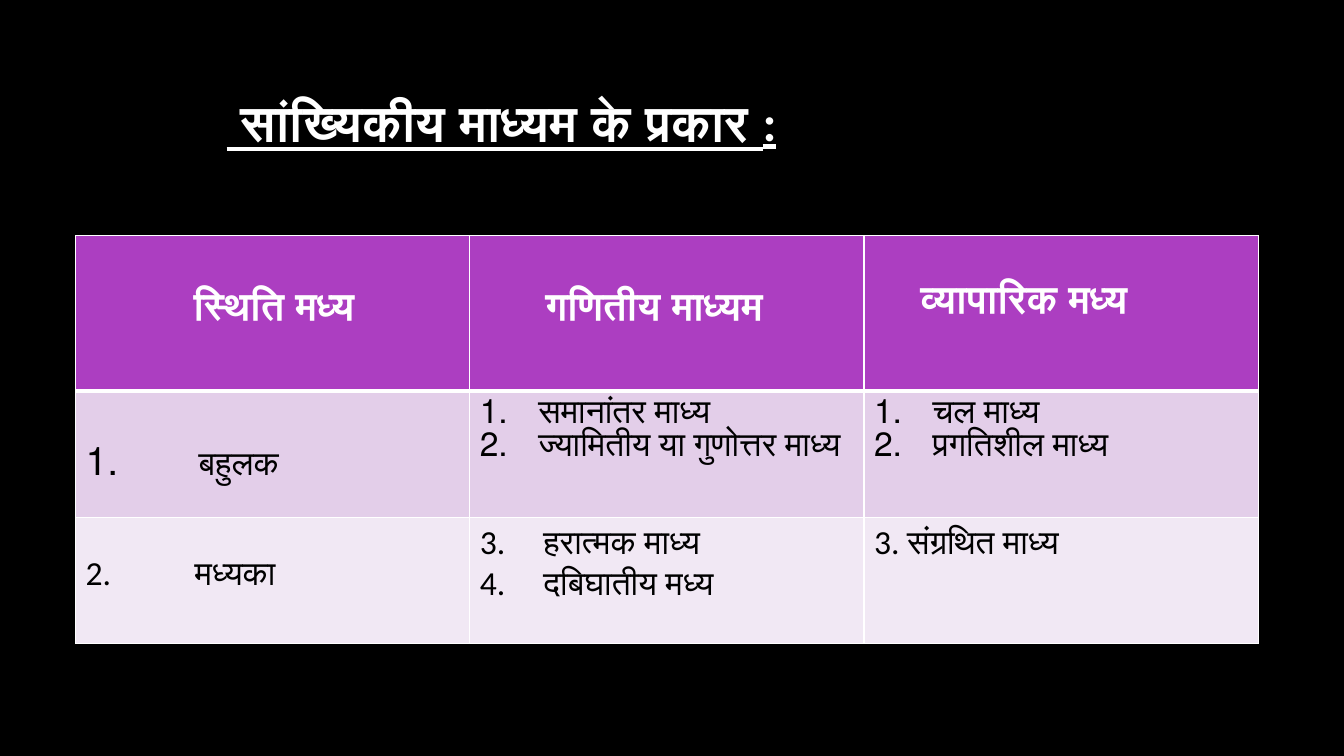
from lxml.etree import SubElement
from pptx import Presentation
from pptx.dml.color import RGBColor as RGB
from pptx.enum.text import MSO_ANCHOR as Anchor, PP_ALIGN as Align
from pptx.oxml import parse_xml
from pptx.oxml.ns import nsdecls, qn
from pptx.util import Inches, Pt

WIDE, HIGH = 13.33, 7.5
BLACK = RGB(0, 0, 0)
WHITE = RGB(255, 255, 255)
PURPLE = RGB(0xAC, 0x3E, 0xC1)
LILAC = RGB(0xE3, 0xCE, 0xE9)
PALE = RGB(0xF1, 0xE8, 0xF4)

TITLE = dict(name="Calibri", size=Pt(36), bold=True, underline=True)
HEAD = dict(name="Calibri", size=Pt(28), bold=True)
BODY = dict(name="Calibri", size=Pt(24), bold=False)

ROWS = [1.54, 1.25, 1.25]
FILLS = [PURPLE, LILAC, PALE]
PAD = 0.1

# Each cell: lines, top margin, left margin, hanging indent, number size in percent
CELLS = [
    [(["स्थिति मध्य"], 0.53, 1.17, 0, 0),
     (["गणितीय माध्यम"], 0.53, 0.75, 0, 0),
     (["व्यापारिक मध्य"], 0.46, 0.56, 0, 0)],
    [(["बहुलक"], 0.57, PAD, 1.12, 117),
     (["समानांतर माध्य", "ज्यामितीय या गुणोत्तर माध्य"], 0.05, PAD, 0.58, 100),
     (["चल माध्य", "प्रगतिशील माध्य"], 0.05, PAD, 0.58, 100)],
    [(["2.\tमध्यका"], 0.36, PAD, 1.08, 0),
     (["3.\tहरात्मक माध्य", "4.\tदबिघातीय मध्य"], 0.05, PAD, 0.63, 0),
     (["3. संग्रथित माध्य"], 0.05, PAD, 0, 0)],
]


def style(font, look, color):
    for key, value in look.items():
        setattr(font, key, value)
    font.color.rgb = color


def hang(para, indent, percent):
    """Set a hanging indent, with automatic numbers if percent is given."""
    props = para._p.get_or_add_pPr()
    props.set("marL", str(Inches(indent)))
    props.set("indent", str(-Inches(indent)))
    if percent:
        SubElement(props, qn("a:buSzPct"), val=str(percent * 1000))
        SubElement(props, qn("a:buFont"), typeface="Arial")
        SubElement(props, qn("a:buAutoNum"), type="arabicPeriod")


def edge(cell, widths):
    """Draw white borders; widths run left, right, top, bottom in points."""
    props = cell._tc.get_or_add_tcPr()
    for spot, (side, width) in enumerate(zip("LRTB", widths)):
        props.insert(spot, parse_xml(
            f'<a:ln{side} {nsdecls("a")} w="{Pt(width)}"><a:solidFill>'
            f'<a:srgbClr val="{WHITE}"/></a:solidFill></a:ln{side}>'))


def fill_cell(cell, row, data):
    lines, top, left, indent, percent = data
    cell.fill.solid()
    cell.fill.fore_color.rgb = FILLS[row]
    edge(cell, (1, 1, 3 if row == 1 else 1, 3 if row == 0 else 1))
    cell.margin_top, cell.margin_left = Inches(top), Inches(left)
    cell.vertical_anchor = Anchor.TOP
    frame = cell.text_frame
    for index, line in enumerate(lines):
        para = frame.add_paragraph() if index else frame.paragraphs[0]
        para.alignment = Align.LEFT
        if indent:
            hang(para, indent, percent)
        run = para.add_run()
        run.text = line
        style(run.font, BODY if row else HEAD, BLACK if row else WHITE)


def add_title(slide, box):
    frame = slide.shapes.add_textbox(*map(Inches, box)).text_frame
    frame.word_wrap = True
    frame.vertical_anchor = Anchor.MIDDLE
    para = frame.paragraphs[0]
    para.line_spacing = 0.9
    run = para.add_run()
    run.text = " सांख्यिकीय माध्यम के प्रकार :"
    style(run.font, TITLE, WHITE)


def add_grid(slide, box):
    table = slide.shapes.add_table(
        len(CELLS), len(CELLS[0]), *map(Inches, box)).table
    for row, (height, cells) in enumerate(zip(ROWS, CELLS)):
        table.rows[row].height = Inches(height)
        for col, data in enumerate(cells):
            fill_cell(table.cell(row, col), row, data)


def main():
    deck = Presentation()
    deck.slide_width, deck.slide_height = Inches(WIDE), Inches(HIGH)
    slide = deck.slides.add_slide(deck.slide_layouts[6])
    slide.background.fill.solid()
    slide.background.fill.fore_color.rgb = BLACK
    add_title(slide, (2.15, 0.36, 7.41, 1.76))
    add_grid(slide, (0.75, 2.34, 11.73, sum(ROWS)))
    deck.save("out.pptx")


if __name__ == "__main__":
    main()
